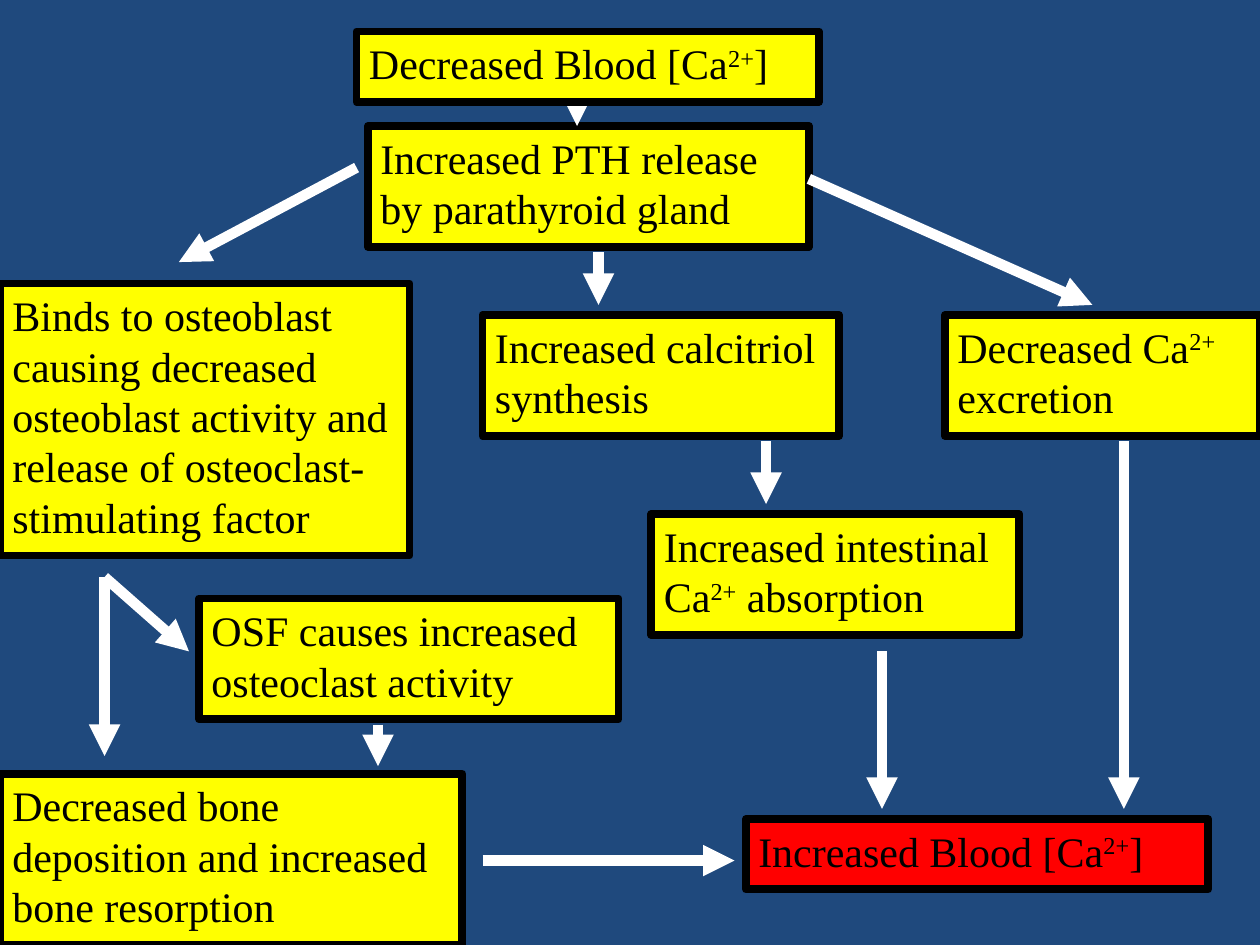
from lxml.etree import SubElement
from pptx import Presentation
from pptx.dml.color import RGBColor
from pptx.enum.shapes import MSO_CONNECTOR, MSO_SHAPE
from pptx.enum.text import MSO_ANCHOR, MSO_AUTO_SIZE, PP_ALIGN
from pptx.oxml.ns import qn
from pptx.util import Inches, Pt

NAVY, YELLOW, RED = "1F497D", "FFFF00", "FF0000"
BLACK, WHITE = "000000", "FFFFFF"
ONE_LINE, TWO_LINES, THREE_LINES, FIVE_LINES = 0.56, 0.96, 1.36, 2.16

STEPS = [
    ("Increased PTH release by parathyroid gland", (2.92, 1, 3.5, TWO_LINES), YELLOW),
    ("Binds to osteoblast causing decreased osteoblast activity and release of "
     "osteoclast-stimulating factor", (0, 2.25, 3.25, FIVE_LINES), YELLOW),
    ("OSF causes increased osteoclast activity", (1.58, 4.75, 3.33, TWO_LINES), YELLOW),
    ("Decreased bone deposition and increased bone resorption",
     (0, 6.14, 3.67, THREE_LINES), YELLOW),
    ("Increased calcitriol synthesis", (3.83, 2.5, 2.83, TWO_LINES), YELLOW),
    ("Increased intestinal Ca^2+^ absorption", (5.17, 4.08, 2.92, TWO_LINES), YELLOW),
    ("Decreased Ca^2+^ excretion", (7.5, 2.5, 2.5, TWO_LINES), YELLOW),
    ("Increased Blood [Ca^2+^]", (5.92, 6.5, 3.67, ONE_LINE), RED),
]
TRIGGER = ("Decreased Blood [Ca^2+^]", (2.83, 0.25, 3.67, ONE_LINE), YELLOW)

ARROWS = [
    ((4.58, 0.58), (4.58, 1)),
    ((2.83, 1.33), (1.42, 2.08)),
    ((4.75, 2), (4.75, 2.42)),
    ((6.42, 1.42), (8.67, 2.42)),
    ((6.08, 3.5), (6.08, 4)),
    ((0.83, 4.58), (1.5, 5.17)),
    ((0.83, 4.58), (0.83, 6)),
    ((3, 5.75), (3, 6.08)),
    ((3.83, 6.83), (5.83, 6.83)),
    ((7, 5.17), (7, 6.42)),
    ((8.92, 3.5), (8.92, 6.42)),
]


def color(value):
    return RGBColor.from_string(value)


def write(para, text, *, size=24, font="Times New Roman", ink=BLACK, before=50):
    para.alignment = PP_ALIGN.LEFT
    spacing = SubElement(para._p.get_or_add_pPr(), qn("a:spcBef"))
    SubElement(spacing, qn("a:spcPct")).set("val", str(before * 1000))
    for index, part in enumerate(text.split("^")):
        span = para.add_run()
        span.text = part
        span.font.size = Pt(size)
        span.font.name = font
        span.font.color.rgb = color(ink)
        if index % 2:
            span._r.get_or_add_rPr().set("baseline", "30000")


def add_step(page, text, box, fill):
    step = page.shapes.add_shape(MSO_SHAPE.RECTANGLE, *map(Inches, box))
    step.shadow.inherit = False
    step.fill.solid()
    step.fill.fore_color.rgb = color(fill)
    step.line.color.rgb = color(BLACK)
    step.line.width = Pt(4.5)
    frame = step.text_frame
    frame.word_wrap = True
    frame.auto_size = MSO_AUTO_SIZE.SHAPE_TO_FIT_TEXT
    frame.vertical_anchor = MSO_ANCHOR.TOP
    write(frame.paragraphs[0], text)


def add_arrow(page, start, end):
    arrow = page.shapes.add_connector(
        MSO_CONNECTOR.STRAIGHT, *map(Inches, start + end))
    arrow.line.color.rgb = color(WHITE)
    arrow.line.width = Pt(6)
    SubElement(arrow.line._get_or_add_ln(), qn("a:tailEnd")).set("type", "triangle")
    SubElement(arrow._element.spPr, qn("a:effectLst"))


def add_flowchart(page):
    for step in STEPS:
        add_step(page, *step)
    for arrow in ARROWS:
        add_arrow(page, *arrow)
    add_step(page, *TRIGGER)


def main():
    deck = Presentation()
    deck.slide_width, deck.slide_height = Inches(10), Inches(7.5)
    page = deck.slides.add_slide(deck.slide_layouts[6])
    page.background.fill.solid()
    page.background.fill.fore_color.rgb = color(NAVY)
    add_flowchart(page)
    deck.save("out.pptx")


if __name__ == "__main__":
    main()
